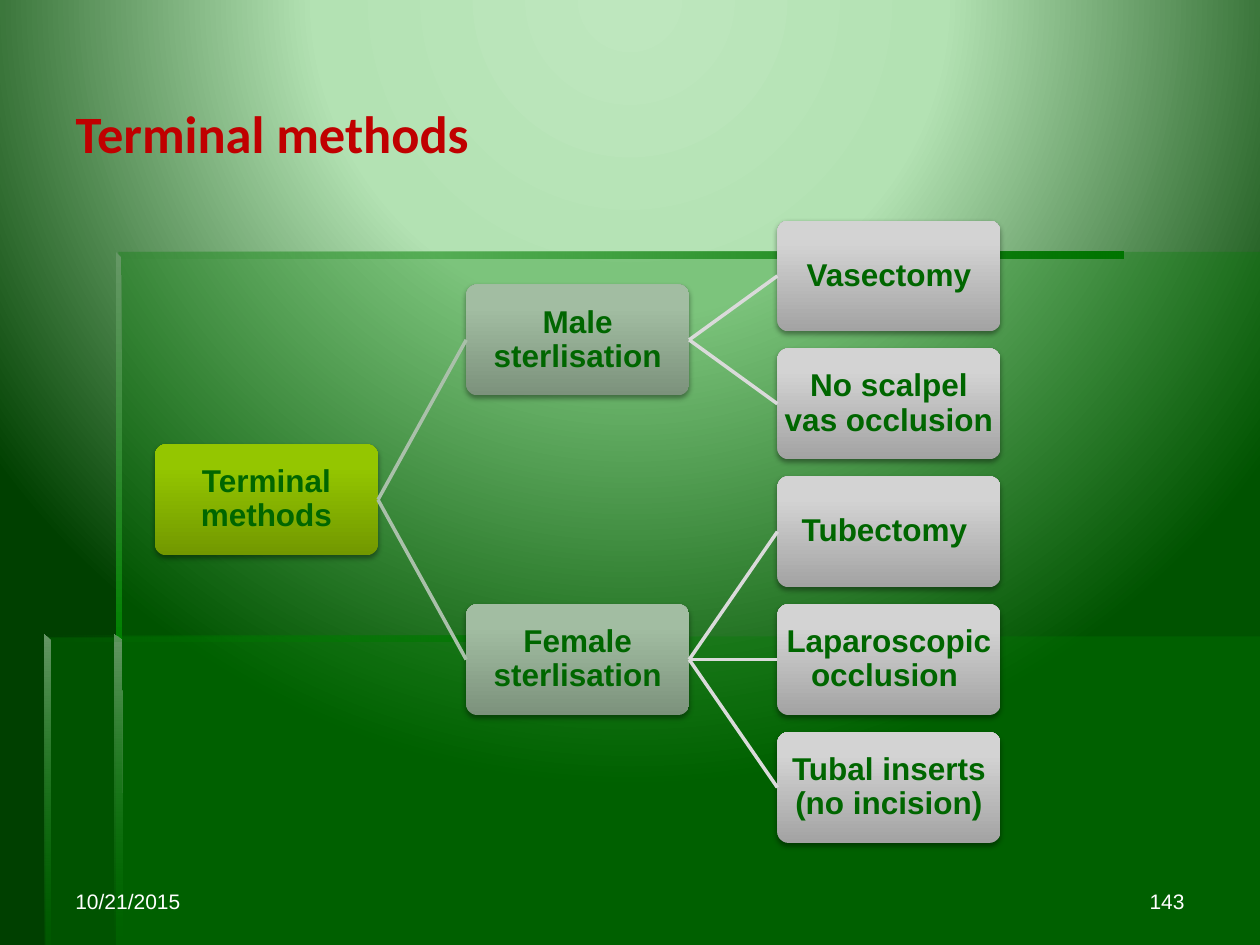
from lxml.etree import SubElement
from pptx import Presentation
from pptx.dml.color import RGBColor
from pptx.enum.shapes import MSO_CONNECTOR, MSO_SHAPE
from pptx.enum.text import MSO_ANCHOR, PP_ALIGN
from pptx.oxml.ns import qn
from pptx.util import Inches, Pt

GREEN = RGBColor(0x00, 0x80, 0x00)
DEEP_GREEN = RGBColor(0x00, 0x75, 0x00)
SAGE = RGBColor(0x66, 0x97, 0x66)
LABEL_GREEN = RGBColor(0x00, 0x66, 0x00)
TITLE_RED = RGBColor(0xC0, 0x00, 0x00)
WHITE = RGBColor(0xFF, 0xFF, 0xFF)
BLACK = RGBColor(0x00, 0x00, 0x00)
BRANCH_LINE = RGBColor(0xAA, 0xC0, 0xAA)
LEAF_LINE = RGBColor(0xDA, 0xDA, 0xDA)
BACKDROP = [(0, RGBColor(0xBE, 0xE7, 0xBE), 100), (40, RGBColor(0xB3, 0xE2, 0xB3), 100),
            (100, RGBColor(0x00, 0x40, 0x00), 100)]
ROOT_COLOURS = (RGBColor(0x72, 0x98, 0x00), RGBColor(0x94, 0xC6, 0x00), RGBColor(0x95, 0xC7, 0x00))
BRANCH_COLOURS = (RGBColor(0x7C, 0x92, 0x7C), RGBColor(0xA2, 0xBD, 0xA2), RGBColor(0xA2, 0xBF, 0xA2))
LEAF_COLOURS = (RGBColor(0xA3, 0xA3, 0xA3), RGBColor(0xD3, 0xD3, 0xD3), RGBColor(0xD4, 0xD4, 0xD4))
LEVEL_COLOURS = (ROOT_COLOURS, BRANCH_COLOURS, LEAF_COLOURS)
LEVEL_LINES = (BRANCH_LINE, LEAF_LINE)

FADE_IN = [(0, GREEN, 0), (100, DEEP_GREEN, 100)]
PANELS = [
    [(0.92, 5.05), (0.92, 7.5), (10, 7.5), (10, 5.05)],
    [(0.94, 5.06), (0.36, 5.06), (0.36, 7.5), (10, 7.5), (10, 2), (0.94, 2)],
]
BARS = [
    ([(0.92, 2), (0.92, 2.05), (8.92, 2.05), (8.92, 2)], FADE_IN, 0),
    ([(0.92, 2), (0.92, 5.1), (0.97, 5.1), (0.96, 2.04)], [(0, SAGE, 100), (100, GREEN, 100)], 90),
    ([(0.91, 7.5), (0.97, 7.5), (0.96, 5.08), (0.91, 5.04)], [(0, SAGE, 100), (100, GREEN, 0)], 90),
    ([(0.35, 5.04), (0.35, 5.09), (5.35, 5.09), (5.35, 5.04)], FADE_IN, 0),
    ([(0.35, 5.04), (0.35, 7.5), (0.4, 7.5), (0.4, 5.09)], [(0, SAGE, 100), (100, GREEN, 10)], 90),
]
METHODS = ("Terminal methods", [
    ("Male sterlisation", [("Vasectomy", []), ("No scalpel vas occlusion", [])]),
    ("Female sterlisation", [("Tubectomy ", []), ("Laparoscopic occlusion ", []),
                             ("Tubal inserts (no incision)", [])]),
])
NODE_WIDTH, NODE_HEIGHT = Inches(1.77), Inches(0.88)
TITLE_FONT = {"name": "Calibri", "size": Pt(30), "bold": True}
NODE_FONT = {"name": "Arial", "size": Pt(18), "bold": True}
FOOTER_FONT = {"name": "Arial", "size": Pt(12), "bold": False}
NODE_MARGINS = dict.fromkeys(
    ("margin_left", "margin_top", "margin_right", "margin_bottom"), Inches(0.01))


def apply(target, values):
    """Set each attribute of target from a dict of format values."""
    for attribute, value in values.items():
        setattr(target, attribute, value)


def write(frame, words, font, colour, align, **paragraph_format):
    """Put one formatted, vertically centred paragraph in a text frame."""
    frame.text = words
    apply(frame, {"word_wrap": True, "vertical_anchor": MSO_ANCHOR.MIDDLE})
    paragraph = frame.paragraphs[0]
    apply(paragraph, {"alignment": align, **paragraph_format})
    run_font = paragraph.runs[0].font
    apply(run_font, font)
    run_font.color.rgb = colour


def add_alpha(colour_element, percent):
    """Give a colour element its opacity."""
    SubElement(colour_element, qn("a:alpha"), val=str(percent * 1000))


def add_colour(parent, colour, percent):
    """Append an RGB colour with opacity."""
    add_alpha(SubElement(parent, qn("a:srgbClr"), val=str(colour)), percent)


def fill_gradient(fill, owner, stops, angle=None):
    """Fill with stops along an angle, or in circles from the top centre."""
    fill.gradient()
    gradient = owner.xpath(".//a:gradFill")[0]
    for child in list(gradient):
        gradient.remove(child)
    stop_list = SubElement(gradient, qn("a:gsLst"))
    for position, colour, percent in stops:
        stop = SubElement(stop_list, qn("a:gs"), pos=str(position * 1000))
        add_colour(stop, colour, percent)
    if angle is None:
        circle = SubElement(gradient, qn("a:path"), {"path": "circle"})
        SubElement(circle, qn("a:fillToRect"), l="50000", t="-80000", r="50000", b="180000")
    else:
        SubElement(gradient, qn("a:lin"), ang=str(angle * 60000), scaled="0")


def add_outline(slide, points):
    """Draw a closed borderless outline through points in inches."""
    start, *rest = [(Inches(x), Inches(y)) for x, y in points]
    builder = slide.shapes.build_freeform(*start)
    builder.add_line_segments(rest, close=True)
    outline = builder.convert_to_shape()
    outline.shadow.inherit = False
    outline.line.fill.background()
    return outline


def add_backdrop(slide):
    """Draw the glowing background, its panels and its bars."""
    fill_gradient(slide.background.fill, slide.element, BACKDROP)
    for points in PANELS:
        panel = add_outline(slide, points)
        panel.fill.solid()
        panel.fill.fore_color.rgb = GREEN
        add_alpha(panel.element.xpath("./p:spPr/a:solidFill/a:srgbClr")[0], 30)
    for points, stops, angle in BARS:
        bar = add_outline(slide, points)
        fill_gradient(bar.fill, bar.element, stops, angle)


def add_title(slide, left, top, width, height):
    """Place the heading in the title placeholder."""
    title = slide.shapes.title
    apply(title, {"left": left, "top": top, "width": width, "height": height})
    write(title.text_frame, "Terminal methods", TITLE_FONT, TITLE_RED, PP_ALIGN.LEFT)


def add_node(slide, words, level, left, top):
    """Draw one shaded, rounded node of the tree."""
    node = slide.shapes.add_shape(
        MSO_SHAPE.ROUNDED_RECTANGLE, left, top, NODE_WIDTH, NODE_HEIGHT)
    node.adjustments[0] = 0.1
    node.line.fill.background()
    stops = [(position, colour, 100)
             for position, colour in zip((0, 80, 100), LEVEL_COLOURS[level])]
    fill_gradient(node.fill, node.element, stops, 270)
    node.shadow.inherit = False
    shadow = SubElement(node.element.xpath("./p:spPr/a:effectLst")[0], qn("a:outerShdw"),
                        blurRad=str(Pt(3.1)), dist=str(Pt(1.6)), dir="5400000", rotWithShape="0")
    add_colour(shadow, BLACK, 38)
    apply(node.text_frame, NODE_MARGINS)
    write(node.text_frame, words, NODE_FONT, LABEL_GREEN, PP_ALIGN.CENTER, line_spacing=0.9)
    return node


def add_link(slide, parent, child, colour):
    """Join the right side of a parent to the left side of a child."""
    link = slide.shapes.add_connector(MSO_CONNECTOR.STRAIGHT, 0, 0, 0, 0)
    link.begin_connect(parent, 3)
    link.end_connect(child, 1)
    link.line.color.rgb = colour
    link.line.width = Pt(2)
    SubElement(link.element.spPr, qn("a:effectLst"))


def count_leaves(branch):
    """Count the end nodes below a branch."""
    return sum(map(count_leaves, branch[1])) or 1


def add_tree(slide, tree, left, top, width, height):
    """Lay out the tree from left to right, each parent centred on its children."""
    column_step = (width - NODE_WIDTH) // 2
    row_step = (height - NODE_HEIGHT) // (count_leaves(tree) - 1)

    def add_branch(branch, level, first_row):
        """Place a branch whose first leaf is in the given row."""
        words, children = branch
        nodes, row = [], first_row
        for child in children:
            nodes.append(add_branch(child, level + 1, row))
            row += count_leaves(child)
        node_top = (nodes[0].top + nodes[-1].top) // 2 if nodes else top + first_row * row_step
        node = add_node(slide, words, level, left + level * column_step, node_top)
        for child_node in nodes:
            add_link(slide, node, child_node, LEVEL_LINES[level])
        return node

    add_branch(tree, 0, 0)


def add_footer(slide, left, top, width, height):
    """Place the date at the left and the page number at the right."""
    field_width = Inches(2.33)
    for words, field_left, align in (
            ("10/21/2015", left, PP_ALIGN.LEFT),
            ("143", left + width - field_width, PP_ALIGN.RIGHT)):
        field = slide.shapes.add_textbox(field_left, top, field_width, height)
        write(field.text_frame, words, FOOTER_FONT, WHITE, align)


def main():
    """Build and save the slide."""
    deck = Presentation()
    apply(deck, {"slide_width": Inches(10), "slide_height": Inches(7.5)})
    slide = deck.slides.add_slide(deck.slide_layouts[5])
    add_backdrop(slide)
    add_title(slide, Inches(0.5), Inches(0.27), Inches(9.17), Inches(1.57))
    add_tree(slide, METHODS, Inches(1.23), Inches(1.75), Inches(6.71), Inches(4.94))
    add_footer(slide, Inches(0.5), Inches(6.95), Inches(9), Inches(0.4))
    deck.save("out.pptx")


if __name__ == "__main__":
    main()
